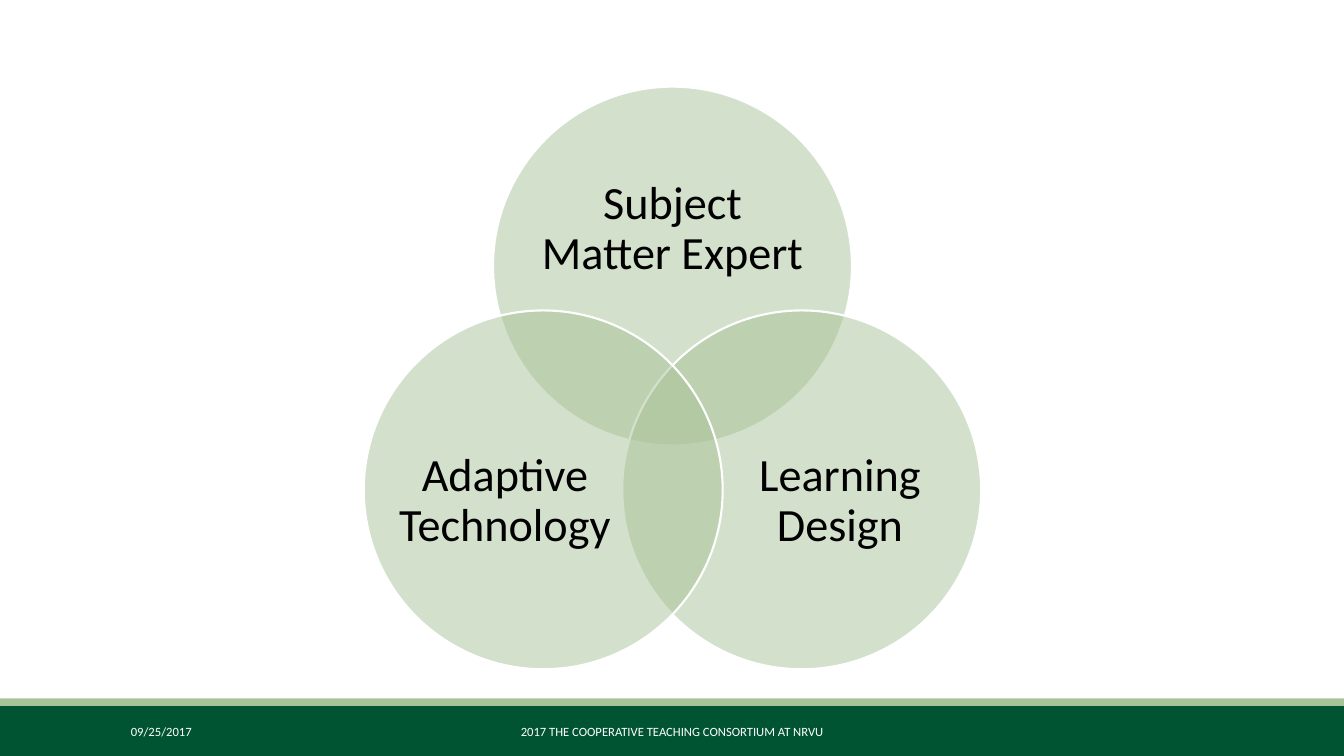
from math import cos, radians, sin

from lxml.etree import SubElement
from pptx import Presentation
from pptx.dml.color import RGBColor
from pptx.enum.shapes import MSO_SHAPE
from pptx.enum.text import MSO_ANCHOR, PP_ALIGN
from pptx.oxml.ns import qn
from pptx.util import Inches, Pt

# Content
WIDTH, HEIGHT = 13.33, 7.5
DARK, SAGE, WHITE, BLACK = "005432", "A9C399", "FFFFFF", "000000"
BANDS = [(7, 0.5, DARK), (6.93, 0.07, SAGE)]  # top, height, colour
FOOTER = [  # text, left, width, alignment
    ("09/25/2017", 1.2, 2.7, PP_ALIGN.LEFT),
    ("2017 THE COOPERATIVE TEACHING CONSORTIUM AT NRVU", 4.03, 5.27, PP_ALIGN.CENTER),
]
CIRCLES = [  # text, angle, label offset from circle centre, label size
    ("Subject Matter Expert", -90, (0, -0.36), (2.61, 1.6)),
    ("Learning Design", 30, (0.38, 0.12), (2.13, 1.96)),
    ("Adaptive Technology", 150, (-0.38, 0.12), (2.13, 1.96)),
]
VENN_X, VENN_Y, ORBIT, DIAMETER = 6.67, 4.12, 1.48, 3.56
FOOTER_FONT = {"name": "Calibri", "size": Pt(9)}
LABEL_FONT = {"name": "Calibri", "size": Pt(33)}


def rgb(value):
    return RGBColor.from_string(value)


def add_filled(s, kind, box, color):
    sp = s.shapes.add_shape(kind, *map(Inches, box))
    sp.shadow.inherit = False
    sp.fill.solid()
    sp.fill.fore_color.rgb = rgb(color)
    sp.line.fill.background()
    return sp


def add_text(s, text, box, font, color, align):
    tf = s.shapes.add_textbox(*map(Inches, box)).text_frame
    tf.word_wrap = True
    tf.vertical_anchor = MSO_ANCHOR.MIDDLE
    p = tf.paragraphs[0]
    p.alignment = align
    r = p.add_run()
    r.text = text
    for key, value in font.items():
        setattr(r.font, key, value)
    r.font.color.rgb = rgb(color)
    return tf


def centred(x, y, w, h):
    return x - w / 2, y - h / 2, w, h


prs = Presentation()
prs.slide_width, prs.slide_height = Inches(WIDTH), Inches(HEIGHT)
s = prs.slides.add_slide(prs.slide_layouts[6])

# Footer bands and text
for top, height, color in BANDS:
    add_filled(s, MSO_SHAPE.RECTANGLE, (0, top, WIDTH, height), color)
for text, left, width, align in FOOTER:
    add_text(s, text, (left, 7.06, width, 0.4), FOOTER_FONT, WHITE, align)

# Venn circles, evenly spaced around the middle
for text, angle, (dx, dy), size in CIRCLES:
    x = VENN_X + ORBIT * cos(radians(angle))
    y = VENN_Y + ORBIT * sin(radians(angle))
    sp = add_filled(s, MSO_SHAPE.OVAL, centred(x, y, DIAMETER, DIAMETER), SAGE)
    sp.line.color.rgb = rgb(WHITE)
    sp.line.width = Pt(1.5)
    fill_color = sp.fill._xPr.find(qn("a:solidFill"))[0]
    SubElement(fill_color, qn("a:alpha"), val="50000")

    tf = add_text(s, text, centred(x + dx, y + dy, *size), LABEL_FONT, BLACK, PP_ALIGN.CENTER)
    tf.paragraphs[0].line_spacing = 0.9
    for side in ("left", "top", "right", "bottom"):
        setattr(tf, f"margin_{side}", 0)

prs.save("out.pptx")
